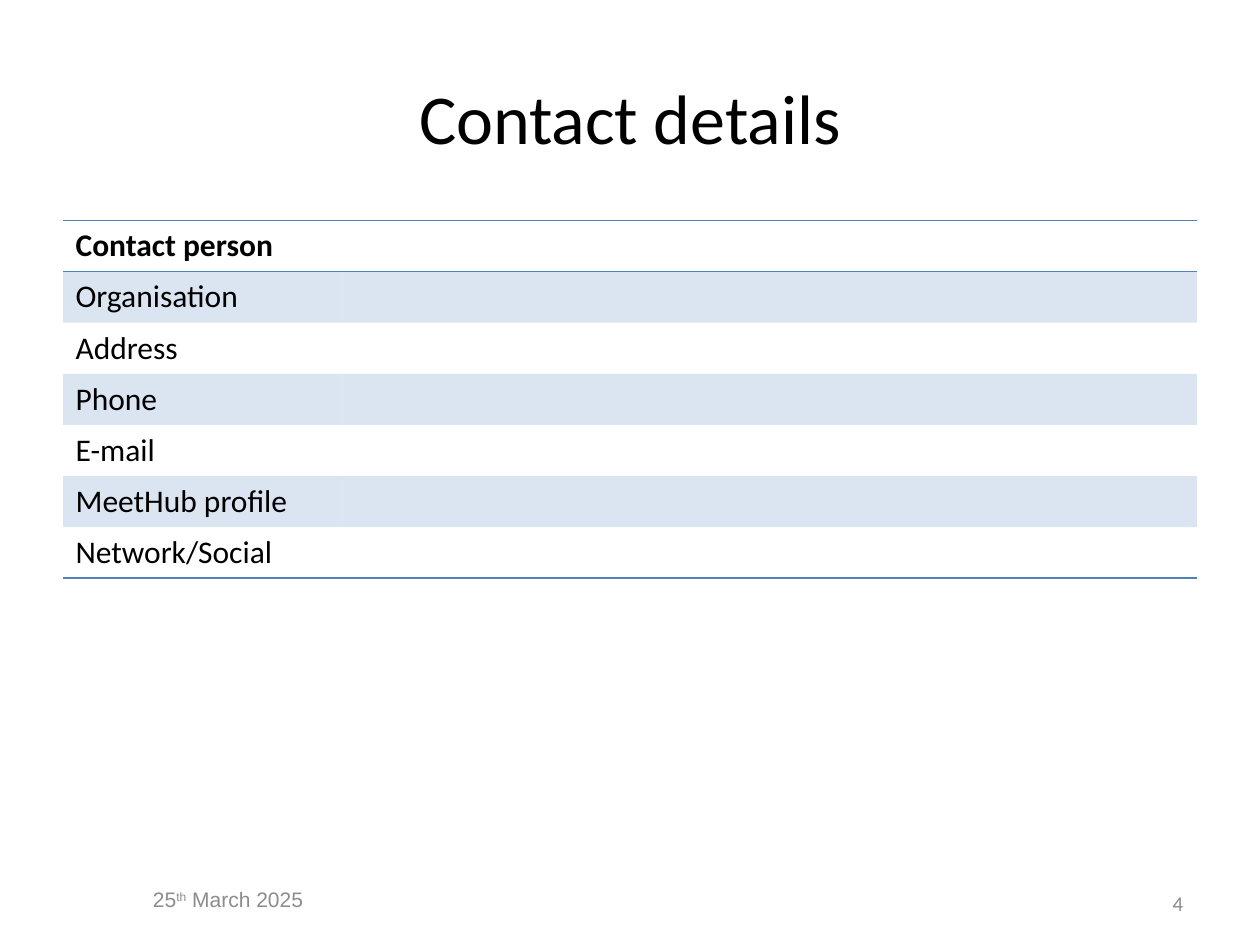
"""Build the contact details slide."""
from dataclasses import dataclass

from lxml import etree
from pptx import Presentation
from pptx import util as u
from pptx.dml.color import RGBColor
from pptx.enum import text
from pptx.oxml import ns

BLACK = RGBColor(0x00, 0x00, 0x00)
GREY = RGBColor(0x8C, 0x8C, 0x8C)
BLUE = RGBColor(0x4F, 0x81, 0xBD)
NO_STYLE = "{2D5ABB26-0587-4C30-8999-92F81FD0307C}"
ROW_HEIGHT = 2.84 / 7
COLUMNS = (2.22, 6.78)
LABELS = ("Contact person", "Organisation", "Address", "Phone", "E-mail",
          "MeetHub profile", "Network/Social")


@dataclass
class Footer:
    """A footer box made of (text, baseline) pieces."""
    box: tuple
    pieces: tuple
    align: text.PP_ALIGN
    font: str


FOOTERS = (
    Footer((0.51, 6.99, 2.6, 0.3), (("25", 0), ("th", 30000), (" March 2025", 0)),
           text.PP_ALIGN.CENTER, "Arial"),
    Footer((7.05, 7.02, 2.44, 0.3), (("4", 0),), text.PP_ALIGN.RIGHT, "Calibri"),
)


def add_run(p, words: str, color: RGBColor, **formats):
    """Add a run with the given font values."""
    r = p.add_run()
    r.text = words
    for name, value in formats.items():
        setattr(r.font, name, value)
    r.font.color.rgb = color
    return r


def add_footer(s, footer: Footer) -> None:
    """Draw one footer text box."""
    tf = s.shapes.add_textbox(*map(u.Inches, footer.box)).text_frame
    tf.word_wrap = True
    tf.vertical_anchor = text.MSO_ANCHOR.MIDDLE
    p = tf.paragraphs[0]
    p.alignment = footer.align
    for words, baseline in footer.pieces:
        r = add_run(p, words, GREY, name=footer.font, size=u.Pt(12))
        if baseline:
            r.font._element.set("baseline", str(baseline))


def add_border(cell, side: str) -> None:
    """Add a blue one-point line to a side of a cell."""
    ln = etree.SubElement(cell._tc.get_or_add_tcPr(), ns.qn(f"a:{side}"), w=str(u.Pt(1)))
    fill = etree.SubElement(ln, ns.qn("a:solidFill"))
    etree.SubElement(fill, ns.qn("a:srgbClr"), val=str(BLUE))


def format_cell(cell, row: int) -> None:
    """Give a cell the borders and band of its row."""
    if row == 0:
        add_border(cell, "lnT")
    if row in (0, len(LABELS) - 1):
        add_border(cell, "lnB")
    if row % 2:
        cell.fill.solid()
        cell.fill.fore_color.rgb = BLUE
        color = cell._tc.tcPr.find(".//" + ns.qn("a:srgbClr"))
        etree.SubElement(color, ns.qn("a:alpha"), val="20000")
    else:
        cell.fill.background()


def add_contacts(s) -> None:
    """Draw the contact table."""
    frame = s.shapes.add_table(len(LABELS), len(COLUMNS), u.Inches(0.5), u.Inches(1.75),
                               u.Inches(sum(COLUMNS)), u.Inches(ROW_HEIGHT * len(LABELS)))
    table = frame.table
    table.first_row = table.horz_banding = False
    table._tbl.tblPr.find(ns.qn("a:tableStyleId")).text = NO_STYLE
    for column, width in zip(table.columns, COLUMNS):
        column.width = u.Inches(width)
    for i, label in enumerate(LABELS):
        add_run(table.cell(i, 0).text_frame.paragraphs[0], label, BLACK,
                name="Calibri", size=u.Pt(18), bold=i == 0)
        for cell in table.rows[i].cells:
            format_cell(cell, i)


def main() -> None:
    """Build and save the slide."""
    prs = Presentation()
    prs.slide_width, prs.slide_height = u.Inches(10), u.Inches(7.5)
    s = prs.slides.add_slide(prs.slide_layouts[5])
    for footer in FOOTERS:
        add_footer(s, footer)
    title = s.shapes.title
    box = {"left": 0.5, "top": 0.3, "width": 9, "height": 1.25}
    for name, value in box.items():
        setattr(title, name, u.Inches(value))
    tf = title.text_frame
    tf.vertical_anchor = text.MSO_ANCHOR.MIDDLE
    p = tf.paragraphs[0]
    p.alignment = text.PP_ALIGN.CENTER
    add_run(p, "Contact details", BLACK, name="Calibri", size=u.Pt(40))
    add_contacts(s)
    prs.save("out.pptx")


if __name__ == "__main__":
    main()
